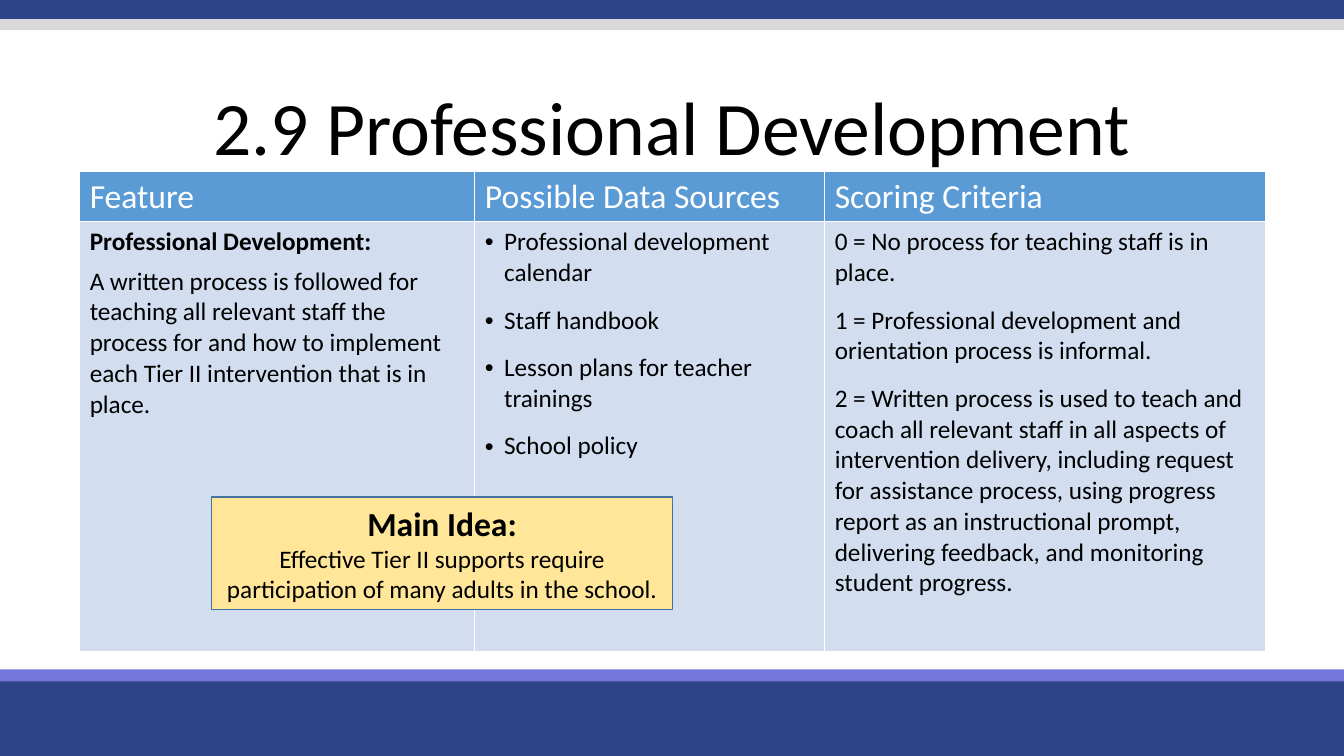
from lxml.etree import SubElement as Sub
from pptx import Presentation
from pptx.dml.color import RGBColor
from pptx.enum.shapes import MSO_SHAPE as Shape
from pptx.enum.text import MSO_ANCHOR as Anchor, PP_ALIGN as Align
from pptx.oxml.ns import qn
from pptx.util import Inches, Pt

WIDE, HIGH = 13.33, 7.5
FONT = "Calibri"
NAVY, GREY, VIOLET = "2E4488", "D9D9D9", "7476DA"
WHITE, BLACK = "FFFFFF", "000000"
HEAD, BODY = "5B9BD5", "D2DEEF"
SAND, EDGE = "FFE699", "43739E"

# top, height, colour
BARS = [(0, 0.19, NAVY), (0.19, 0.11, GREY), (6.7, 0.8, NAVY), (6.64, 0.12, VIOLET)]

COLS, ROWS = [3.92, 3.47, 4.37], [0.5, 4.26]
TITLES = ["Feature", "Possible Data Sources", "Scoring Criteria"]
FEATURE = [
    "Professional Development:",
    "A written process is followed for teaching all relevant staff the process "
    "for and how to implement each Tier II intervention that is in place.",
]
SOURCES = [
    "Professional development calendar",
    "Staff handbook",
    "Lesson plans for teacher trainings",
    "School policy",
]
SCORES = [
    "0 = No process for teaching staff is in place.",
    "1 = Professional development and orientation process is informal.",
    "2 = Written process is used to teach and coach all relevant staff in all "
    "aspects of intervention delivery, including request for assistance process, "
    "using progress report as an instructional prompt, delivering feedback, and "
    "monitoring student progress.",
]
IDEA = [
    "Main Idea:",
    "Effective Tier II supports require participation of many adults in the school.",
]


def paint(fill, color):
    fill.solid()
    fill.fore_color.rgb = RGBColor.from_string(color)


def style(para, size, color=BLACK, bold=False):
    for run in para.runs:
        font = run.font
        font.name, font.size, font.bold = FONT, Pt(size), bold
        font.color.rgb = RGBColor.from_string(color)


def write(frame, lines, size, color=BLACK, gap=0, align=None):
    """Set one paragraph per line, with gap points between them."""
    frame.word_wrap = True
    frame.text = "\n".join(lines)
    for para in frame.paragraphs:
        para.alignment = align
        style(para, size, color)
    for para in frame.paragraphs[:-1]:
        para.space_after = Pt(gap)


def box(slide, left, top, width, height, color, edge=None):
    shape = slide.shapes.add_shape(
        Shape.RECTANGLE, Inches(left), Inches(top), Inches(width), Inches(height))
    shape.shadow.inherit = False
    paint(shape.fill, color)
    if edge:
        paint(shape.line.fill, edge)
        shape.line.width = Pt(1)
    else:
        shape.line.fill.background()
    return shape


def title(slide, text):
    area = slide.shapes.add_textbox(0, Inches(0.69), Inches(WIDE), Inches(1.21))
    frame = area.text_frame
    frame.vertical_anchor = Anchor.MIDDLE
    write(frame, [text], 54, align=Align.CENTER)
    frame.paragraphs[0].line_spacing = 0.9


def border(cell):
    props = cell._tc.get_or_add_tcPr()
    for side in ("lnL", "lnR", "lnT", "lnB"):
        line = Sub(props, qn("a:" + side), w=str(Pt(1)))
        Sub(Sub(line, qn("a:solidFill")), qn("a:srgbClr"), val=WHITE)


def bullet(para):
    props = para._p.get_or_add_pPr()
    indent = Inches(0.19)
    props.set("marL", str(indent))
    props.set("indent", str(-indent))
    Sub(props, qn("a:buFont"), typeface="Arial")
    Sub(props, qn("a:buChar"), char="•")


def rubric(slide):
    """Add the table of feature, sources and scores."""
    table = slide.shapes.add_table(
        len(ROWS), len(COLS), Inches(0.79), Inches(1.7),
        Inches(sum(COLS)), Inches(sum(ROWS))).table
    for col, width in zip(table.columns, COLS):
        col.width = Inches(width)
    for row, height in zip(table.rows, ROWS):
        row.height = Inches(height)
    bodies = [(FEATURE, 6), (SOURCES, 12), (SCORES, 12)]
    for col, (name, (lines, gap)) in enumerate(zip(TITLES, bodies)):
        head, body = table.cell(0, col), table.cell(1, col)
        for cell, color in ((head, HEAD), (body, BODY)):
            border(cell)
            paint(cell.fill, color)
        head.vertical_anchor = Anchor.MIDDLE
        write(head.text_frame, [name], 24, WHITE)
        write(body.text_frame, lines, 18, gap=gap)
    style(table.cell(1, 0).text_frame.paragraphs[0], 18, bold=True)
    for para in table.cell(1, 1).text_frame.paragraphs:
        bullet(para)


def callout(slide):
    frame = box(slide, 2.1, 4.93, 4.57, 1.12, SAND, EDGE).text_frame
    frame.vertical_anchor = Anchor.MIDDLE
    write(frame, IDEA, 18, align=Align.CENTER)
    style(frame.paragraphs[0], 24, bold=True)


def main():
    deck = Presentation()
    deck.slide_width, deck.slide_height = Inches(WIDE), Inches(HIGH)
    slide = deck.slides.add_slide(deck.slide_layouts[6])
    for top, height, color in BARS:
        box(slide, 0, top, WIDE, height, color)
    title(slide, "2.9 Professional Development")
    rubric(slide)
    callout(slide)
    deck.save("out.pptx")


if __name__ == "__main__":
    main()
